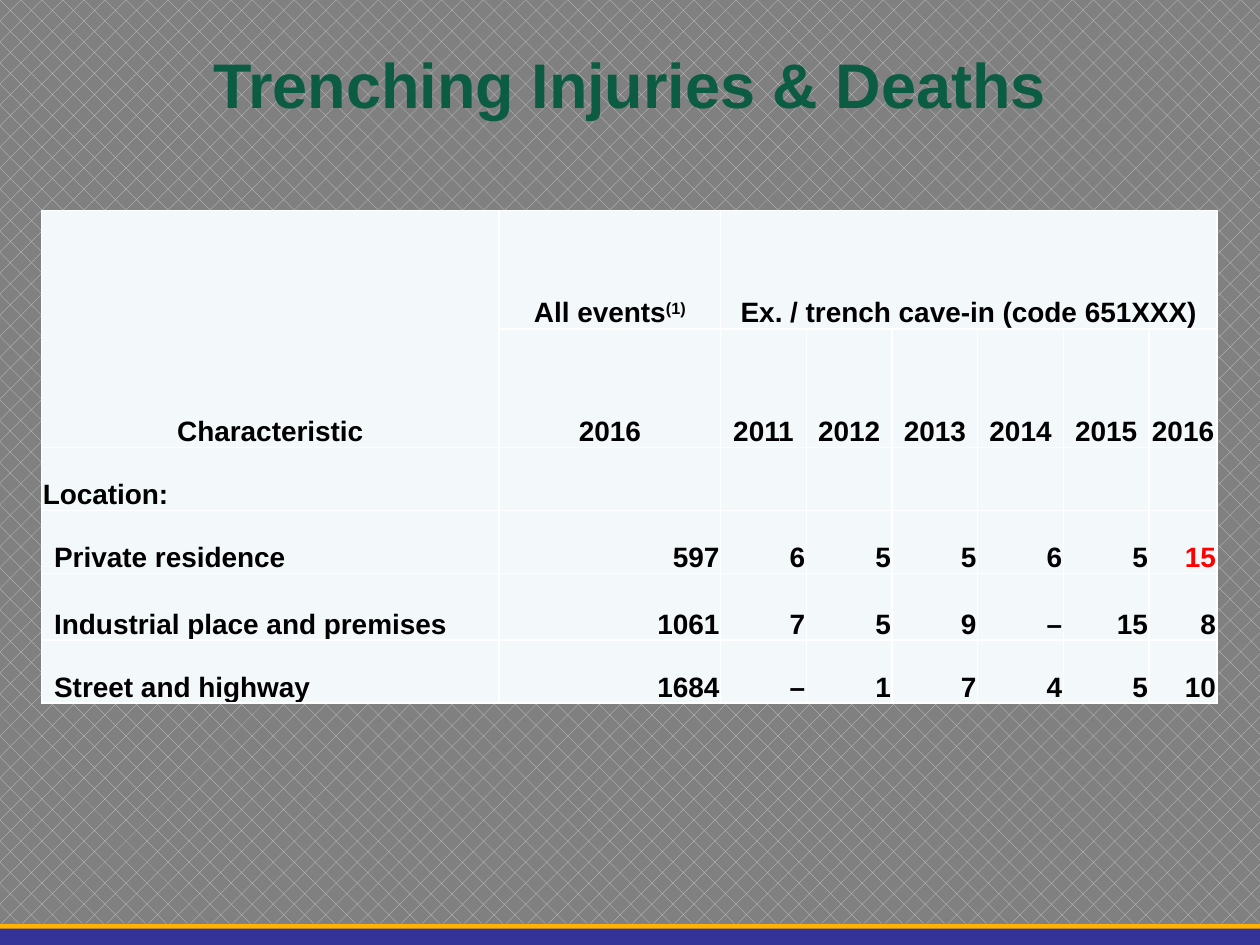
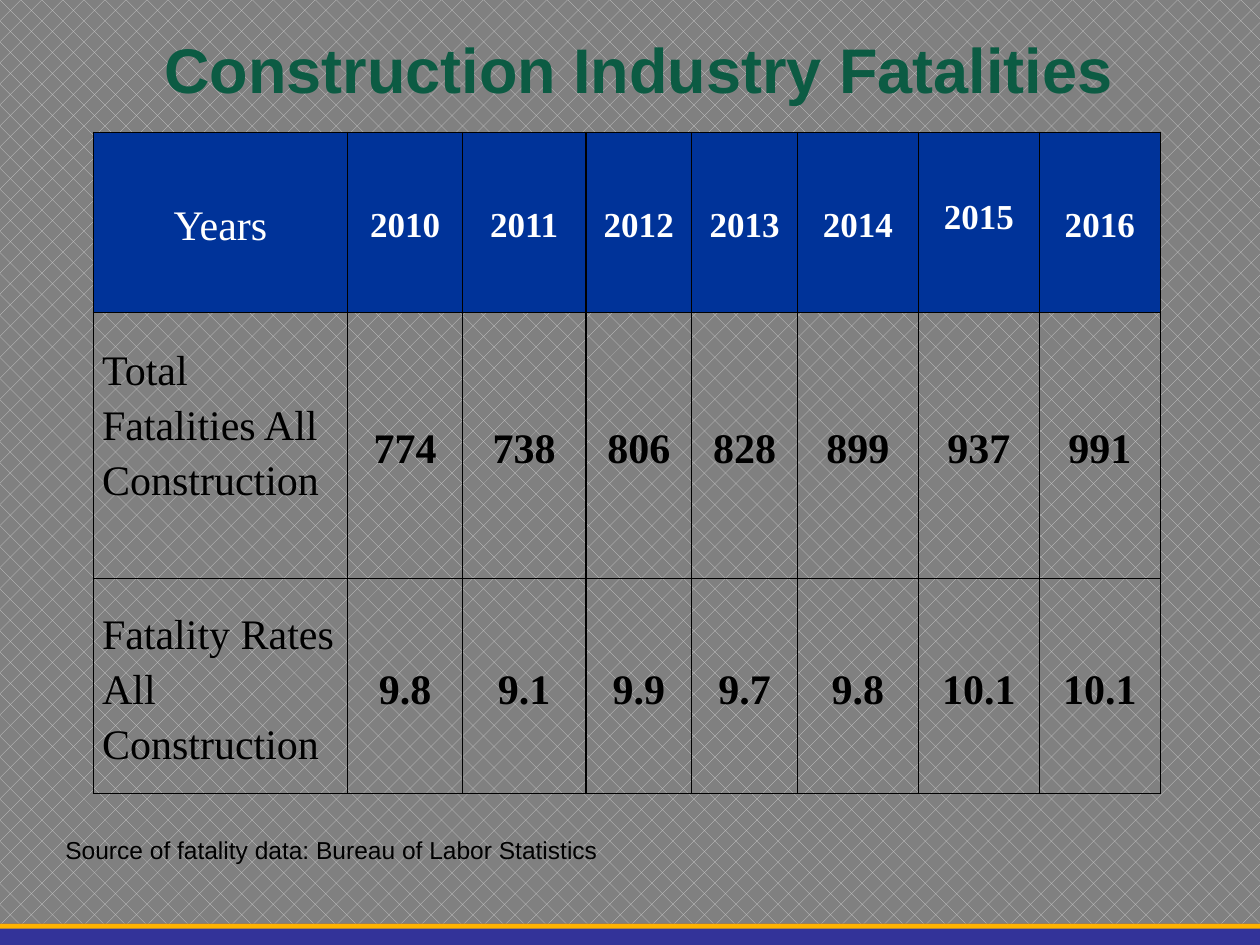
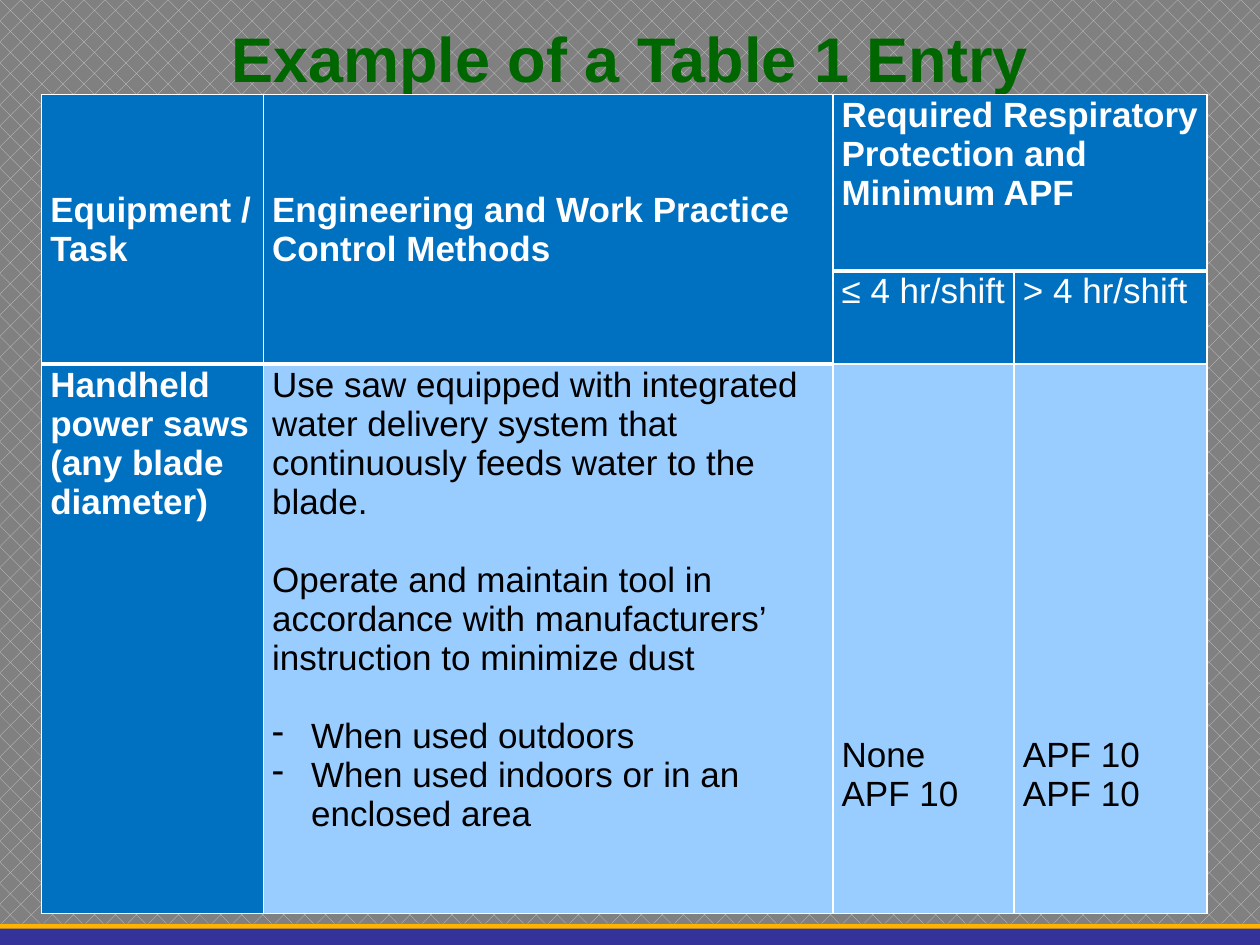
"""Build three safety slides, each a title above a table."""
import dataclasses
import typing

import lxml.etree
import pptx
import pptx.dml.color
import pptx.enum.dml
import pptx.enum.shapes
import pptx.enum.text
import pptx.oxml.ns
import pptx.util

Inches = pptx.util.Inches
Pt = pptx.util.Pt
ALIGN = pptx.enum.text.PP_ALIGN
ANCHOR = pptx.enum.text.MSO_ANCHOR

WHITE, BLACK, RED = "FFFFFF", "000000", "FF0000"
GREEN, DARK_GREEN = "0C5B43", "006600"
GOLD, INDIGO = "FFB300", "333399"
ICE, NAVY, BLUE, SKY = "F3F9FA", "003399", "0070C0", "99CCFF"
SANS, SERIF = "Arial", "Times New Roman"


@dataclasses.dataclass(frozen=True)
class Style:
    size: float
    font: str = SANS
    color: str = BLACK
    bold: bool = False
    align: typing.Any = ALIGN.LEFT
    line_spacing: typing.Optional[float] = None


@dataclasses.dataclass(frozen=True)
class Para:
    text: str
    superscript: str = ""
    gap_before: float = 0
    dash: bool = False


@dataclasses.dataclass(frozen=True)
class Cell:
    paras: typing.Tuple[Para, ...]
    style: Style
    fill: typing.Optional[str] = None
    anchor: typing.Any = ANCHOR.MIDDLE
    margins: typing.Tuple[float, float, float, float] = (0.07, 0, 0.07, 0)
    span: typing.Tuple[int, int] = (1, 1)


@dataclasses.dataclass(frozen=True)
class Grid:
    left: float
    top: float
    cols: typing.Sequence[float]
    rows: typing.Sequence[float]
    border: str
    thick_below: typing.FrozenSet[typing.Tuple[int, int]] = frozenset()


@dataclasses.dataclass(frozen=True)
class Band:
    top: float
    height: float
    color: str


BANDS = (Band(7.33, 0.17, INDIGO), Band(7.33, 0.04, GOLD))


def rgb(color: str) -> pptx.dml.color.RGBColor:
    """Turn a hex string into a colour."""
    return pptx.dml.color.RGBColor.from_string(color)


def set_fill(fill, color: typing.Optional[str]) -> None:
    """Fill with a solid colour, or with nothing."""
    if color is None:
        fill.background()
    else:
        fill.solid()
        fill.fore_color.rgb = rgb(color)


def add_run(p, text: str, style: Style):
    """Append a formatted run to a paragraph."""
    r = p.add_run()
    r.text = text
    r.font.name, r.font.size, r.font.bold = style.font, Pt(style.size), style.bold
    r.font.color.rgb = rgb(style.color)
    return r


def write(tf, paras: typing.Iterable[Para], style: Style) -> None:
    """Write paragraphs into a text frame."""
    for i, para in enumerate(paras):
        p = tf.add_paragraph() if i else tf.paragraphs[0]
        if para.dash:
            pPr = p._p.get_or_add_pPr()
            pPr.set("marL", str(Inches(0.31)))
            pPr.set("indent", str(-Inches(0.31)))
            bullet = lxml.etree.SubElement(pPr, pptx.oxml.ns.qn("a:buChar"))
            bullet.set("char", "-")
        p.alignment = style.align
        if style.line_spacing:
            p.line_spacing = style.line_spacing
        if para.gap_before:
            p.space_before = Pt(para.gap_before)
        add_run(p, para.text, style)
        if para.superscript:
            r = add_run(p, para.superscript, style)
            r._r.get_or_add_rPr().set("baseline", "30000")


def set_borders(cell, color: str, top: float, bottom: float) -> None:
    """Draw the four borders of a cell, 1 pt wide at the sides."""
    tcPr = cell._tc.get_or_add_tcPr()
    for i, (side, width) in enumerate((("L", 1), ("R", 1), ("T", top), ("B", bottom))):
        ln = lxml.etree.Element(pptx.oxml.ns.qn(f"a:ln{side}"), w=str(Pt(width)))
        fill = lxml.etree.SubElement(ln, pptx.oxml.ns.qn("a:solidFill"))
        lxml.etree.SubElement(fill, pptx.oxml.ns.qn("a:srgbClr"), val=color)
        tcPr.insert(i, ln)


def add_grid(slide, grid: Grid, cells: typing.Sequence[typing.Sequence[typing.Optional[Cell]]]) -> None:
    """Add a table; None stands for a place covered by a merged cell."""
    table = slide.shapes.add_table(
        len(grid.rows), len(grid.cols), Inches(grid.left), Inches(grid.top),
        Inches(sum(grid.cols)), Inches(sum(grid.rows))).table
    table.first_row = table.horz_banding = False
    for column, width in zip(table.columns, grid.cols):
        column.width = Inches(width)
    for row, height in zip(table.rows, grid.rows):
        row.height = Inches(height)
    for i, line in enumerate(cells):
        for j, content in enumerate(line):
            cell = table.cell(i, j)
            if content:
                set_fill(cell.fill, content.fill)
                cell.vertical_anchor = content.anchor
                (cell.margin_left, cell.margin_top,
                 cell.margin_right, cell.margin_bottom) = map(Inches, content.margins)
                write(cell.text_frame, content.paras, content.style)
                height, width = content.span
                if content.span != (1, 1):
                    cell.merge(table.cell(i + height - 1, j + width - 1))
            set_borders(cell, grid.border,
                        3 if (i - 1, j) in grid.thick_below else 1,
                        3 if (i, j) in grid.thick_below else 1)


def add_slide(prs, title: str, left: float, top: float, height: float,
              color: str = GREEN, anchor=ANCHOR.MIDDLE):
    """Add a title-only slide with its title placed and formatted."""
    slide = prs.slides.add_slide(prs.slide_layouts[5])
    sp = slide.shapes.title
    sp.left, sp.top, sp.width, sp.height = map(Inches, (left, top, 9, height))
    tf = sp.text_frame
    tf.auto_size = pptx.enum.text.MSO_AUTO_SIZE.NONE
    tf.vertical_anchor = anchor
    write(tf, [Para(title)], Style(36, color=color, bold=True, align=ALIGN.CENTER))
    return slide


def dress_master(prs, slide) -> None:
    """Give the master its pattern and move the footer bands onto it."""
    master = prs.slide_master
    fill = master.background.fill
    fill.patterned()
    fill.pattern = pptx.enum.dml.MSO_PATTERN.DIAGONAL_BRICK
    fill.fore_color.rgb, fill.back_color.rgb = rgb("CFCFCF"), rgb("808080")
    for band in BANDS:
        sp = slide.shapes.add_shape(
            pptx.enum.shapes.MSO_SHAPE.RECTANGLE, 0, Inches(band.top),
            prs.slide_width, Inches(band.height))
        sp.shadow.inherit = False
        set_fill(sp.fill, band.color)
        sp.line.fill.background()
        master.shapes.element.append(sp.element)


def injuries_cells() -> typing.List[typing.List[typing.Optional[Cell]]]:
    """Lay out the trenching injuries table."""
    def cell(text: str, align, color: str = BLACK, indent: float = 0.01,
             superscript: str = "", span=(1, 1)) -> Cell:
        """Make one bold cell resting on its bottom edge."""
        paras = (Para(text, superscript),) if text else ()
        return Cell(paras, Style(16, color=color, bold=True, align=align), ICE,
                    ANCHOR.BOTTOM, (indent, 0.01, 0.01, 0), span)

    places = (
        ("Private residence", "597 6 5 5 6 5 15"),
        ("Industrial place and premises", "1061 7 5 9 – 15 8"),
        ("Street and highway", "1684 – 1 7 4 5 10"),
    )
    years = ("2016", *map(str, range(2011, 2017)))
    cells = [
        [cell("Characteristic", ALIGN.CENTER, span=(2, 1)),
         cell("All events", ALIGN.CENTER, superscript="(1)"),
         cell("Ex. / trench cave-in (code 651XXX)", ALIGN.CENTER, span=(1, 6)), *[None] * 5],
        [None, *(cell(year, ALIGN.CENTER) for year in years)],
        [cell("Location:", ALIGN.LEFT), *(cell("", ALIGN.LEFT) for _ in years)],
    ]
    for row, (place, counts) in enumerate(places):
        values = counts.split()
        cells.append([cell(place, ALIGN.LEFT, indent=0.1)] + [
            cell(value, ALIGN.RIGHT, RED if row == 0 and value == "15" else BLACK)
            for value in values])
    return cells


def fatalities_cells() -> typing.List[typing.List[Cell]]:
    """Lay out the construction fatalities table."""
    label = Style(24, SERIF, line_spacing=1.19)
    number = dataclasses.replace(label, bold=True, align=ALIGN.CENTER)
    heading = dataclasses.replace(label, color=WHITE, align=ALIGN.CENTER)
    year_style = dataclasses.replace(number, size=20, color=WHITE)
    raised = {"2015": 0.13, "Total Fatalities All Construction": 0.37}

    def cell(text: str, style: Style, fill: typing.Optional[str] = None) -> Cell:
        """Make one cell, raised by a bottom margin where needed."""
        return Cell((Para(text),), style, fill, margins=(0.07, 0, 0.07, raised.get(text, 0)))

    measures = (
        ("Total Fatalities All Construction", "774 738 806 828 899 937 991"),
        ("Fatality Rates All Construction", "9.8 9.1 9.9 9.7 9.8 10.1 10.1"),
    )
    cells = [[cell("Years", heading, NAVY)]
             + [cell(str(year), year_style, NAVY) for year in range(2010, 2017)]]
    for name, values in measures:
        cells.append([cell(name, label)] + [cell(value, number) for value in values.split()])
    return cells


def entry_cells() -> typing.List[typing.List[typing.Optional[Cell]]]:
    """Lay out the equipment and protection table."""
    line = 22.4
    body = Style(20)
    light = Style(20, color=WHITE)
    strong = Style(20, color=WHITE, bold=True)

    def cell(style: Style, fill: str, *paras: typing.Union[str, Para], anchor=ANCHOR.TOP,
             top: float = 0.01, span=(1, 1)) -> Cell:
        """Make one cell from strings and paragraphs."""
        return Cell(tuple(Para(p) if isinstance(p, str) else p for p in paras),
                    style, fill, anchor, (0.07, top, 0.07, 0), span)

    return [
        [cell(strong, BLUE, "Equipment / Task", anchor=ANCHOR.MIDDLE, span=(2, 1)),
         cell(strong, BLUE, "Engineering and Work Practice Control Methods",
              anchor=ANCHOR.MIDDLE, span=(2, 1)),
         cell(strong, BLUE, "Required Respiratory Protection and", "Minimum APF", span=(1, 2)),
         None],
        [None, None, cell(light, BLUE, "≤ 4 hr/shift"), cell(light, BLUE, "> 4 hr/shift")],
        [cell(strong, BLUE, "Handheld power saws", "(any blade diameter)"),
         cell(body, SKY,
              "Use saw equipped with integrated water delivery system that "
              "continuously feeds water to the blade.",
              Para("Operate and maintain tool in accordance with manufacturers’ "
                   "instruction to minimize dust", gap_before=line),
              Para("When used outdoors", gap_before=line, dash=True),
              Para("When used indoors or in an enclosed area", dash=True)),
         cell(body, SKY, "None", "APF 10", top=2.95),
         cell(body, SKY, "APF 10", "APF 10", top=2.95)],
    ]


def main() -> None:
    """Build the presentation and save it."""
    prs = pptx.Presentation()
    prs.slide_width, prs.slide_height = Inches(10), Inches(7.5)

    slide = add_slide(prs, "Trenching Injuries & Deaths", 0.5, 0.07, 1.18)
    dress_master(prs, slide)
    add_grid(slide, Grid(0.33, 1.67, (3.63, 1.76, *[0.68] * 5, 0.54),
                         (0.94, 0.94, 0.5, 0.5, 0.53, 0.5), WHITE), injuries_cells())

    slide = add_slide(prs, "Construction Industry Fatalities", 0.57, 0.19, 0.58,
                      anchor=ANCHOR.TOP)
    add_grid(slide, Grid(0.74, 1.05, (2.02, 0.91, 0.98, 0.84, 0.84, 0.96, 0.96, 0.96),
                         (1.43, 2.11, 1.71), BLACK), fatalities_cells())
    tf = slide.shapes.add_textbox(
        Inches(0.42), Inches(6.58), Inches(5.25), Inches(0.34)).text_frame
    tf.word_wrap = True
    write(tf, [Para("Source of fatality data: Bureau of Labor Statistics")], Style(14))

    slide = add_slide(prs, "Example of a Table 1 Entry", 0.5, 0.08, 0.75, DARK_GREEN)
    thick = frozenset({(0, 0), (0, 1), (0, 2), (0, 3), (1, 0), (1, 1)})
    add_grid(slide, Grid(0.33, 0.75, (1.76, 4.52, 1.44, 1.53), (1.4, 0.74, 4.36),
                         WHITE, thick), entry_cells())

    prs.save("out.pptx")


if __name__ == "__main__":
    main()
